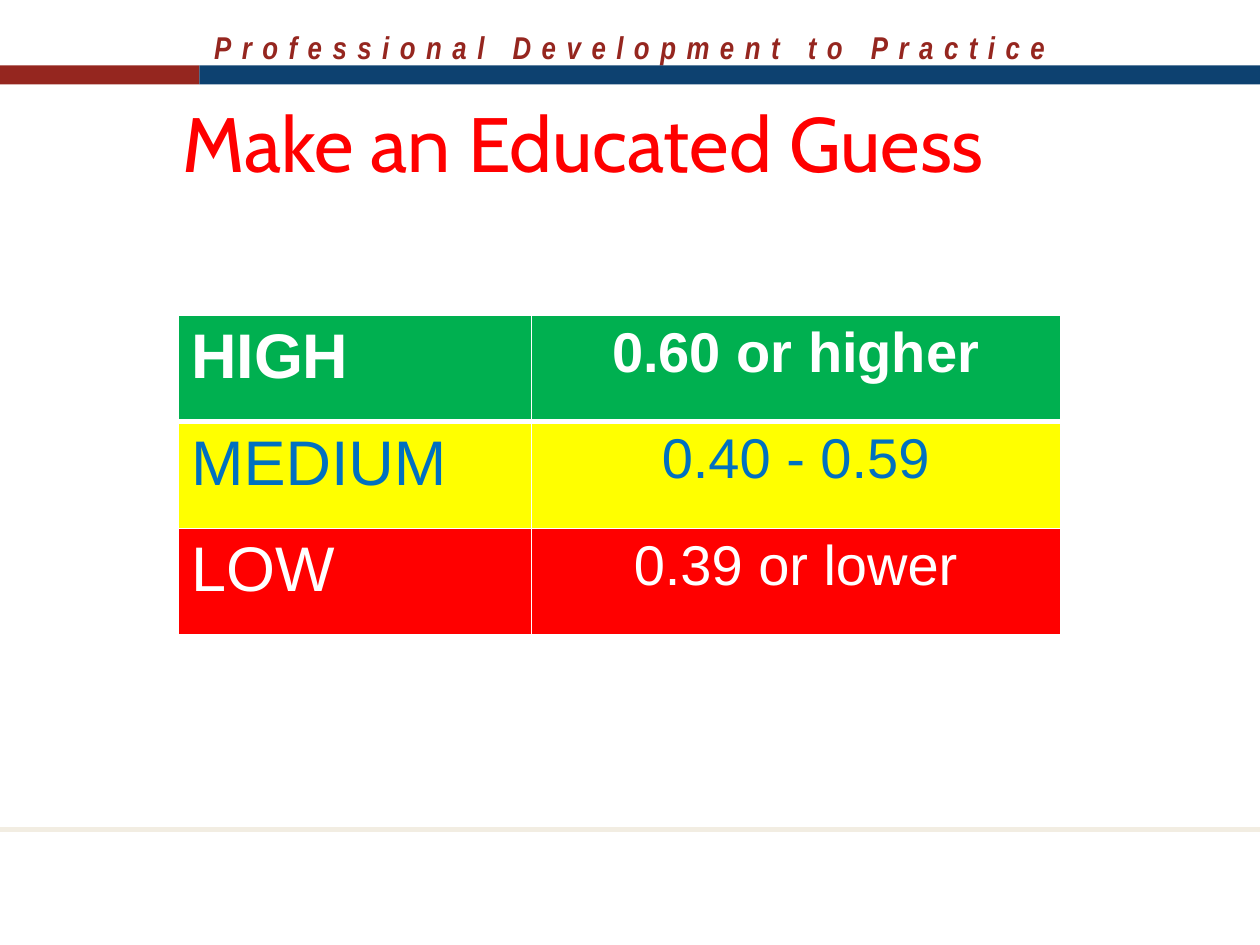
from lxml import etree
from pptx import Presentation
from pptx.dml.color import RGBColor as RGB
from pptx.enum.shapes import MSO_CONNECTOR as Conn, MSO_SHAPE as Shape
from pptx.enum.text import MSO_ANCHOR as Anchor, PP_ALIGN as Align
from pptx.oxml.ns import qn
from pptx.util import Pt

WHITE = RGB(0xFF, 0xFF, 0xFF)
MAROON = RGB(0x95, 0x26, 0x1F)
NAVY = RGB(0x0D, 0x41, 0x70)
CREAM = RGB(0xF2, 0xED, 0xE2)
RED = RGB(0xFF, 0x00, 0x00)
GREEN = RGB(0x00, 0xB0, 0x50)
YELLOW = RGB(0xFF, 0xFF, 0x00)
BLUE = RGB(0x00, 0x70, 0xC0)

WIDE, HIGH = 720, 540

# Level, range, fill, text colour, bold
LEVELS = [
    ("HIGH", "0.60 or higher", GREEN, WHITE, True),
    ("MEDIUM", "0.40 - 0.59", YELLOW, BLUE, False),
    ("LOW", "0.39 or lower", RED, WHITE, False),
]


def add_run(para, text, face, size, color, bold=False, italic=False):
    run = para.add_run()
    run.text = text
    font = run.font
    font.name, font.size = face, Pt(size)
    font.bold, font.italic = bold, italic
    font.color.rgb = color
    return run


def add_label(slide, x, y, w, h, anchor):
    frame = slide.shapes.add_textbox(Pt(x), Pt(y), Pt(w), Pt(h)).text_frame
    frame.word_wrap = True
    frame.vertical_anchor = anchor
    para = frame.paragraphs[0]
    para.alignment = Align.CENTER
    return para


def add_bar(slide, x, y, w, h, color):
    bar = slide.shapes.add_shape(Shape.RECTANGLE, Pt(x), Pt(y), Pt(w), Pt(h))
    bar.shadow.inherit = False
    bar.fill.solid()
    bar.fill.fore_color.rgb = color
    bar.line.fill.background()


def add_header(slide, x, y, w):
    # Spaced motto above a two-colour band
    para = add_label(slide, x, y, w, 29, Anchor.TOP)
    run = add_run(para, "Professional Development to Practice",
                  "Arial Narrow", 18, MAROON, True, True)
    run.font._element.set("spc", "600")
    split = 114
    add_bar(slide, x, y + 25.2, split, 10.8, MAROON)
    add_bar(slide, x + split, y + 25.2, w - split, 10.8, NAVY)


def add_rule(slide, x, y, w):
    rule = slide.shapes.add_connector(
        Conn.STRAIGHT, Pt(x), Pt(y), Pt(x + w), Pt(y))
    rule.line.color.rgb = CREAM
    rule.line.width = Pt(3)
    etree.SubElement(rule._element.spPr, qn("a:effectLst"))


def add_title(slide, x, y, w, h):
    para = add_label(slide, x, y, w, h, Anchor.MIDDLE)
    add_run(para, "Make an Educated Guess", "Cabin", 44, RED)


def set_edges(cell, top, base):
    # Edges go in before the fill, as the schema asks
    props = cell._tc.get_or_add_tcPr()
    for side, width in (("L", 1), ("R", 1), ("T", top), ("B", base)):
        edge = etree.SubElement(props, qn("a:ln" + side), w=str(Pt(width)))
        fill = etree.SubElement(edge, qn("a:solidFill"))
        etree.SubElement(fill, qn("a:srgbClr"), val=str(WHITE))


def add_levels(slide, x, y, w, h):
    count = len(LEVELS)
    table = slide.shapes.add_table(
        count, 2, Pt(x), Pt(y), Pt(w), Pt(h)).table
    for col, share in zip(table.columns, (0.4, 0.6)):
        col.width = Pt(w * share)
    for i, (level, span, fill, color, bold) in enumerate(LEVELS):
        table.rows[i].height = Pt(h / count)
        parts = ((level, 36, Align.LEFT), (span, 32, Align.CENTER))
        for j, (text, size, align) in enumerate(parts):
            cell = table.cell(i, j)
            # Thicker line under the first row
            set_edges(cell, 3 if i == 1 else 1, 3 if i == 0 else 1)
            cell.fill.solid()
            cell.fill.fore_color.rgb = fill
            para = cell.text_frame.paragraphs[0]
            para.alignment = align
            add_run(para, text, "Arial", size, color, bold)


def main():
    deck = Presentation()
    deck.slide_width, deck.slide_height = Pt(WIDE), Pt(HIGH)
    slide = deck.slides.add_slide(deck.slide_layouts[6])
    add_header(slide, 0, 12.2, WIDE)
    add_rule(slide, 0, 474, WIDE)
    add_title(slide, 9.4, 36, 648, 90)
    add_levels(slide, 102, 180, 504, 183)
    deck.save("out.pptx")


if __name__ == "__main__":
    main()
